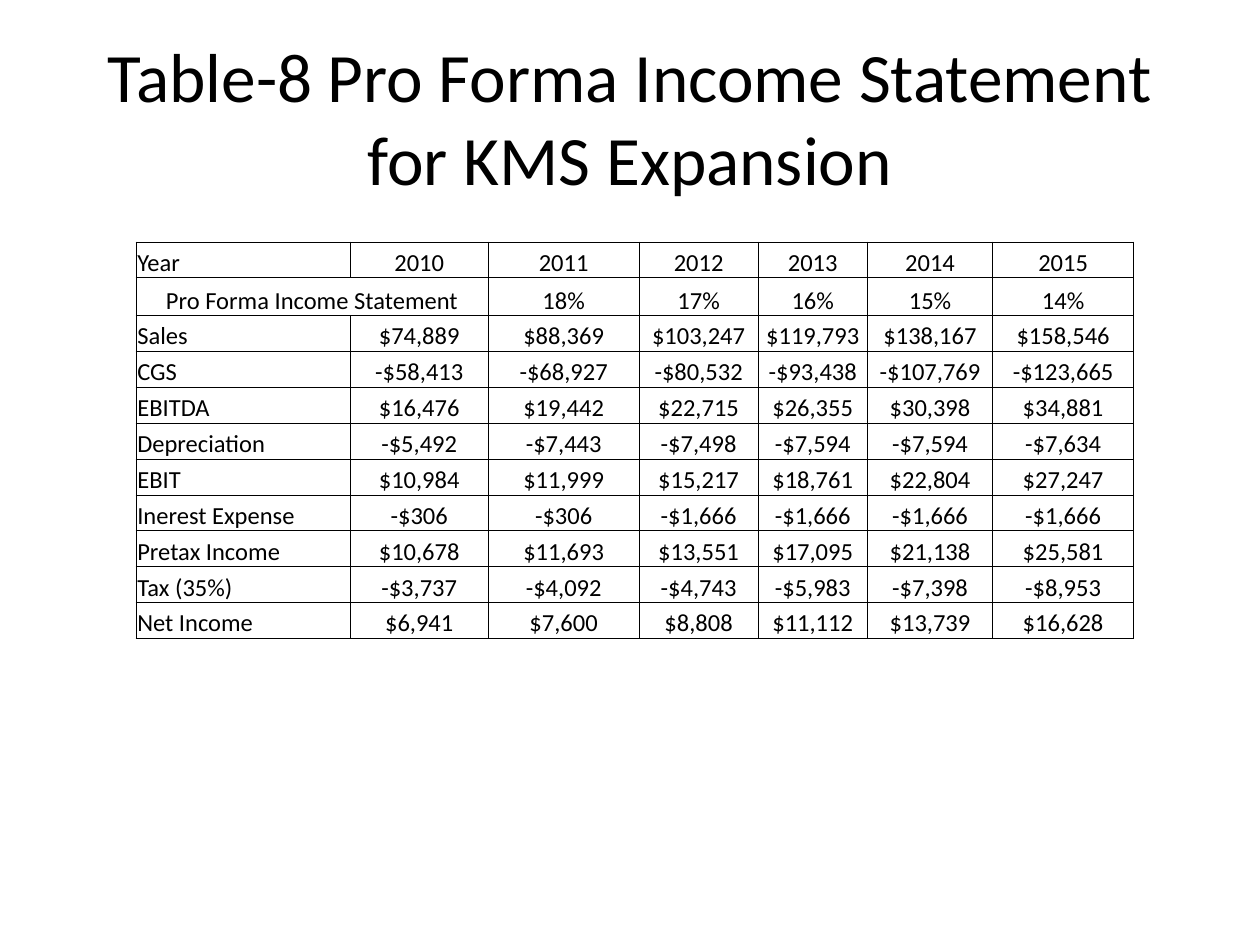
from lxml.etree import SubElement
from pptx import Presentation
from pptx.dml.color import RGBColor
from pptx.enum.text import MSO_ANCHOR as Anchor, PP_ALIGN as Align
from pptx.oxml.ns import qn
from pptx.util import Inches, Pt

TITLE = "Table-8 Pro Forma Income Statement for KMS Expansion"
YEARS = ["Year", "2010", "2011", "2012", "2013", "2014", "2015"]
GROWTH = ["Pro Forma Income Statement", None, "18%", "17%", "16%", "15%", "14%"]
ACCOUNTS = {
    "Sales": [74889, 88369, 103247, 119793, 138167, 158546],
    "CGS": [-58413, -68927, -80532, -93438, -107769, -123665],
    "EBITDA": [16476, 19442, 22715, 26355, 30398, 34881],
    "Depreciation": [-5492, -7443, -7498, -7594, -7594, -7634],
    "EBIT": [10984, 11999, 15217, 18761, 22804, 27247],
    "Inerest Expense": [-306, -306, -1666, -1666, -1666, -1666],
    "Pretax Income": [10678, 11693, 13551, 17095, 21138, 25581],
    "Tax (35%)": [-3737, -4092, -4743, -5983, -7398, -8953],
    "Net Income": [6941, 7600, 8808, 11112, 13739, 16628],
}
COL_WEIGHTS = [1.7, 1.09, 1.2, 0.94, 0.87, 0.99, 1.12]
ROW_WEIGHTS = [0.95, 1] + [0.95] * len(ACCOUNTS)


def rgb(color):
    return RGBColor.from_string(color)


def money(value):
    return f"{'-' if value < 0 else ''}${abs(value):,}"


def share_out(total, weights):
    return [round(total * w / sum(weights)) for w in weights]


class Deck:
    """Holds the style and the current slide, and places elements by shares of its size."""

    font, ink = "Calibri", "000000"
    title_size, cell_size, border = Pt(39.6), Pt(14), Pt(0.5)
    inset = Inches(0.01)

    def __init__(self, width, height):
        self.prs = Presentation()
        self.prs.slide_width, self.prs.slide_height = Inches(width), Inches(height)
        self.s = self.prs.slides.add_slide(self.prs.slide_layouts[5])

    def box(self, x, y, w, h):
        width, height = self.prs.slide_width, self.prs.slide_height
        return round(x * width), round(y * height), round(w * width), round(h * height)

    def set_text(self, tf, text, size, align):
        tf.text = text
        p = tf.paragraphs[0]
        p.alignment = align
        p.font.name, p.font.size = self.font, size
        p.font.color.rgb = rgb(self.ink)

    def title(self, text, *area):
        sp = self.s.shapes.title
        sp.left, sp.top, sp.width, sp.height = self.box(*area)
        sp.text_frame.word_wrap = True
        sp.text_frame.vertical_anchor = Anchor.MIDDLE
        self.set_text(sp.text_frame, text, self.title_size, Align.CENTER)

    def outline(self, cell):
        tc_pr = cell._tc.get_or_add_tcPr()
        for side in "LRTB":
            ln = SubElement(tc_pr, qn(f"a:ln{side}"), w=str(self.border))
            fill = SubElement(ln, qn("a:solidFill"))
            SubElement(fill, qn("a:srgbClr"), val=self.ink)

    def cell(self, cell, text, align):
        cell.margin_left = cell.margin_right = cell.margin_top = self.inset
        cell.margin_bottom = 0
        cell.vertical_anchor = Anchor.BOTTOM
        self.outline(cell)
        cell.fill.background()
        if text is not None:
            self.set_text(cell.text_frame, text, self.cell_size, align)

    def table(self, rows, col_weights, row_weights, *area):
        x, y, w, h = self.box(*area)
        table = self.s.shapes.add_table(len(rows), len(col_weights), x, y, w, h).table
        table.first_row = table.horz_banding = False
        for col, width in zip(table.columns, share_out(w, col_weights)):
            col.width = width
        for row, height in zip(table.rows, share_out(h, row_weights)):
            row.height = height
        for i, row in enumerate(rows):
            for j, text in enumerate(row):
                label = j == 0 and row[1] is not None
                self.cell(table.cell(i, j), text, Align.LEFT if label else Align.CENTER)
                if text is None:
                    table.cell(i, j - 1).merge(table.cell(i, j))


def main():
    deck = Deck(10, 7.5)
    deck.title(TITLE, 0.05, 0.04, 0.9, 1 / 6)
    accounts = [[name, *map(money, values)] for name, values in ACCOUNTS.items()]
    deck.table([YEARS, GROWTH, *accounts], COL_WEIGHTS, ROW_WEIGHTS,
               0.108, 0.256, 0.792, 0.42)
    deck.prs.save("out.pptx")


if __name__ == "__main__":
    main()
